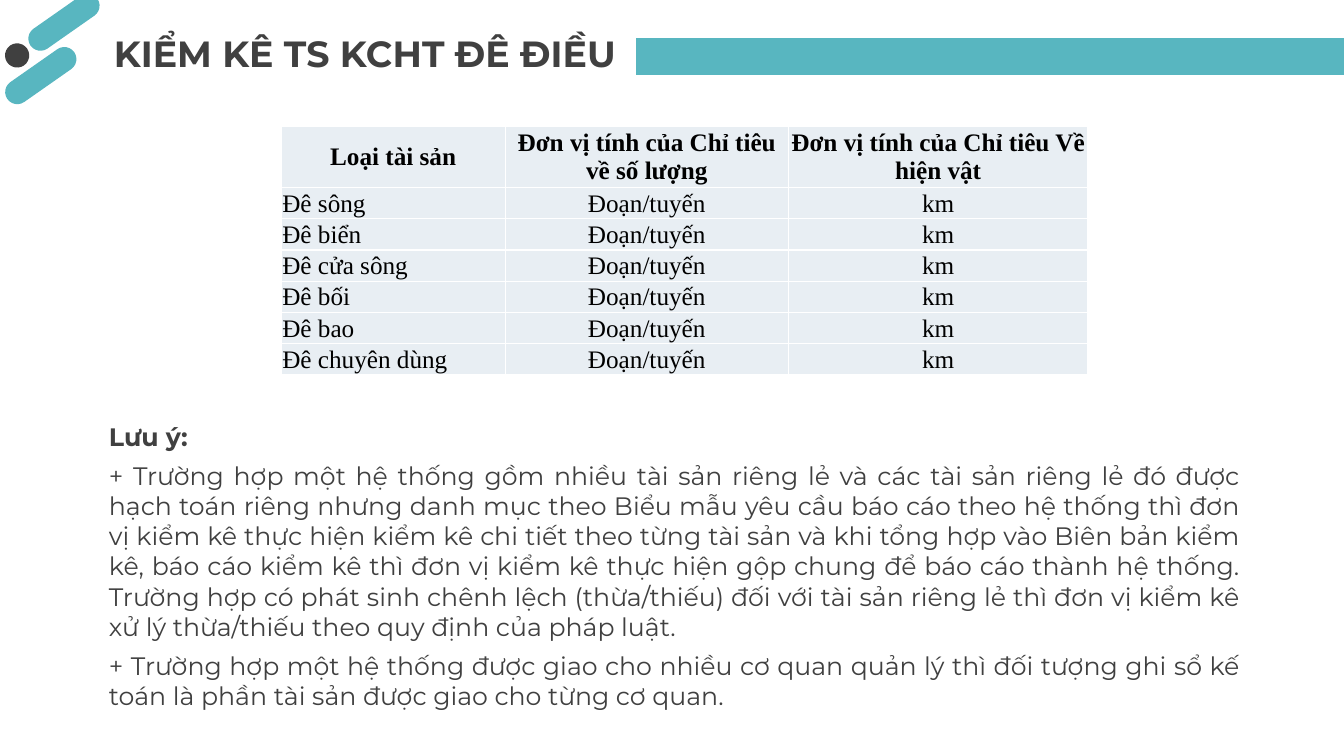
from lxml.etree import SubElement
from pptx import Presentation
from pptx.dml.color import RGBColor
from pptx.enum.shapes import MSO_CONNECTOR, MSO_SHAPE
from pptx.enum.text import MSO_ANCHOR, MSO_AUTO_SIZE, PP_ALIGN
from pptx.oxml.ns import qn
from pptx.util import Inches, Pt

# Content
TITLE = "KIỂM KÊ TS KCHT ĐÊ ĐIỀU"
HEADERS = ["Loại tài sản", "Đơn vị tính của Chỉ tiêu về số lượng",
           "Đơn vị tính của Chỉ tiêu Về hiện vật"]
DIKE_TYPES = ["Đê sông", "Đê biển", "Đê cửa sông", "Đê bối", "Đê bao", "Đê chuyên dùng"]
UNITS = ["Đoạn/tuyến", "km"]
NOTES = [
    "Lưu ý:",
    "+ Trường hợp một hệ thống gồm nhiều tài sản riêng lẻ và các tài sản riêng lẻ đó được "
    "hạch toán riêng nhưng danh mục theo Biểu mẫu yêu cầu báo cáo theo hệ thống thì đơn vị "
    "kiểm kê thực hiện kiểm kê chi tiết theo từng tài sản và khi tổng hợp vào Biên bản kiểm "
    "kê, báo cáo kiểm kê thì đơn vị kiểm kê thực hiện gộp chung để báo cáo thành hệ thống. "
    "Trường hợp có phát sinh chênh lệch (thừa/thiếu) đối với tài sản riêng lẻ thì đơn vị "
    "kiểm kê xử lý thừa/thiếu theo quy định của pháp luật.",
    "+ Trường hợp một hệ thống được giao cho nhiều cơ quan quản lý thì đối tượng ghi sổ kế "
    "toán là phần tài sản được giao cho từng cơ quan.",
]

THEME = {
    "teal": "58B6C0", "dark": "404040", "black": "000000", "white": "FFFFFF", "cell": "E8EEF3",
    "font": "Montserrat", "table_font": "Times New Roman",
    "title_size": 26, "text_size": 18, "bar_width": 26.25, "border_width": 1,
}

# Layout: left, top, width, height in inches
TITLE_BOX = (1.03, 0.26, 8.54, 0.54)
NOTES_BOX = (0.98, 4.13, 11.42, 3)
TABLE_BOX = (2.79, 1.25, 8, 2.47)
COLUMN_WIDTHS = [2.22, 2.81, 2.97]
ROW_HEIGHTS = [0.61] + [0.31] * len(DIKE_TYPES)
ORNAMENTS = [((0.23, 0.1, 0.81, 0.24), "teal"), ((0, 0.63, 0.81, 0.24), "teal"),
             ((0.05, 0.43, 0.24, 0.24), "dark")]


def color(name):
    return RGBColor.from_string(THEME[name])


def apply(target, values):
    for name, value in values.items():
        setattr(target, name, value)


def place(shape, box):
    apply(shape, dict(zip(("left", "top", "width", "height"), map(Inches, box))))


def style_font(font, size, color_name, bold, family="font"):
    apply(font, {"name": THEME[family], "size": Pt(THEME[size]), "bold": bold})
    font.color.rgb = color(color_name)


def add_ornaments(slide):
    group = slide.shapes.add_group_shape()
    for box, fill in ORNAMENTS:
        shape = group.shapes.add_shape(MSO_SHAPE.ROUNDED_RECTANGLE, *map(Inches, box))
        shape.adjustments[0] = 0.5
        shape.rotation = 325
        shape.shadow.inherit = False
        shape.fill.solid()
        shape.fill.fore_color.rgb = color(fill)
        shape.line.fill.background()


def add_title(slide):
    title = slide.shapes.title
    place(title, TITLE_BOX)
    title.text = TITLE
    apply(title.text_frame, {"word_wrap": True, "auto_size": MSO_AUTO_SIZE.NONE,
                             "vertical_anchor": MSO_ANCHOR.TOP})
    paragraph = title.text_frame.paragraphs[0]
    paragraph.alignment = PP_ALIGN.LEFT
    style_font(paragraph.font, "title_size", "dark", True)

    # Bar to the right of the title
    bar = slide.shapes.add_connector(MSO_CONNECTOR.STRAIGHT, Inches(6.31), Inches(0.56),
                                     Inches(13.33), Inches(0.56))
    bar.line.color.rgb = color("teal")
    bar.line.width = Pt(THEME["bar_width"])
    SubElement(bar.element.spPr, qn("a:effectLst"))


def add_borders(cell):
    properties = cell.fill._xPr
    for index, side in enumerate(("a:lnL", "a:lnR", "a:lnT", "a:lnB")):
        border = properties.makeelement(qn(side), {"w": str(Pt(THEME["border_width"]))})
        properties.insert(index, border)
        fill = SubElement(border, qn("a:solidFill"))
        SubElement(fill, qn("a:srgbClr"), val=THEME["white"])


def add_units_table(slide):
    rows = [HEADERS] + [[dike] + UNITS for dike in DIKE_TYPES]
    table = slide.shapes.add_table(len(rows), len(HEADERS), *map(Inches, TABLE_BOX)).table
    apply(table, {"first_row": False, "horz_banding": False})
    for column, width in zip(table.columns, COLUMN_WIDTHS):
        column.width = Inches(width)
    for row, height in zip(table.rows, ROW_HEIGHTS):
        row.height = Inches(height)
    for row_index, texts in enumerate(rows):
        for column_index, text in enumerate(texts):
            cell = table.cell(row_index, column_index)
            cell.text = text
            apply(cell, {"margin_left": Inches(0.01), "margin_right": Inches(0.01),
                         "margin_top": Inches(0.01), "margin_bottom": 0,
                         "vertical_anchor": MSO_ANCHOR.MIDDLE})
            cell.fill.solid()
            cell.fill.fore_color.rgb = color("cell")
            add_borders(cell)
            is_header = row_index == 0
            paragraph = cell.text_frame.paragraphs[0]
            centred = is_header or column_index > 0
            paragraph.alignment = PP_ALIGN.CENTER if centred else PP_ALIGN.LEFT
            style_font(paragraph.font, "text_size", "black", is_header, "table_font")


def add_notes_text(slide):
    body = slide.placeholders[1]
    place(body, NOTES_BOX)
    frame = body.text_frame
    frame.text = "\n".join(NOTES)
    apply(frame, {"word_wrap": True, "auto_size": MSO_AUTO_SIZE.NONE,
                  "vertical_anchor": MSO_ANCHOR.TOP})
    for index, paragraph in enumerate(frame.paragraphs):
        properties = paragraph._p.get_or_add_pPr()
        apply(paragraph, {"alignment": PP_ALIGN.JUSTIFY, "space_before": Pt(6 if index else 0)})
        properties.set("marL", "0")
        properties.set("indent", "0")
        SubElement(properties, qn("a:buNone"))
        style_font(paragraph.font, "text_size", "dark", index == 0)


def main():
    presentation = Presentation()
    apply(presentation, {"slide_width": Inches(13.33), "slide_height": Inches(7.5)})
    slide = presentation.slides.add_slide(presentation.slide_layouts[1])
    add_ornaments(slide)
    add_title(slide)
    add_units_table(slide)
    add_notes_text(slide)
    presentation.save("out.pptx")


if __name__ == "__main__":
    main()
